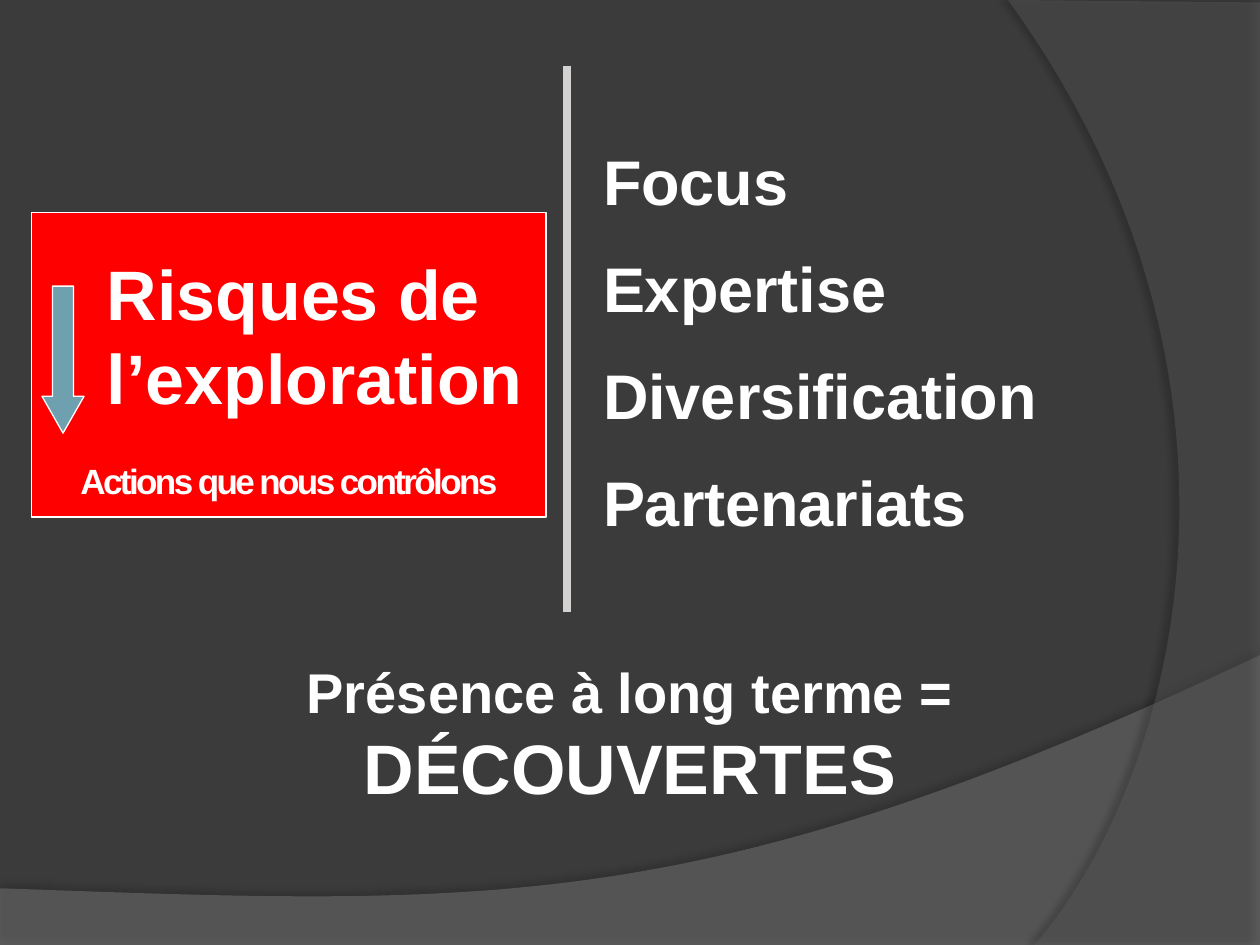
import pptx
import pptx.util
import pptx.dml.color
import pptx.enum.shapes
import pptx.enum.text
from lxml import etree
from pptx.oxml.ns import qn

Pt = pptx.util.Pt
SHAPE = pptx.enum.shapes.MSO_SHAPE
ALIGN = pptx.enum.text.PP_ALIGN
COLORS = {
    "background": "3B3B3B", "hill": "7F7F7F", "arc": "5E5E5E", "shadow": "000000",
    "text": "FFFFFF", "divider": "D4D2D0", "panel": "FF0000", "arrow": "6EA0B0",
}


def rgb(name):
    return pptx.dml.color.RGBColor.from_string(COLORS[name])


def curve(p0, p1, p2, p3, steps=60):
    """Points along a cubic Bezier curve, without its start."""
    points = []
    for i in range(1, steps + 1):
        t = i / steps
        weights = ((1 - t) ** 3, 3 * t * (1 - t) ** 2, 3 * t * t * (1 - t), t ** 3)
        points.append(tuple(sum(w * p[axis] for w, p in zip(weights, (p0, p1, p2, p3)))
                            for axis in (0, 1)))
    return points


def add_wave(slide, points, color, opacity, shadow_opacity, distance, angle):
    """Translucent outline with a soft shadow."""
    start, *rest = [(Pt(x), Pt(y)) for x, y in points]
    builder = slide.shapes.build_freeform(*start)
    builder.add_line_segments(rest, close=True)
    sp = builder.convert_to_shape()
    sp.fill.solid()
    sp.fill.fore_color.rgb = rgb(color)
    sp.line.fill.background()
    srgb = sp.fill._xPr.find(".//" + qn("a:srgbClr"))
    etree.SubElement(srgb, qn("a:alpha"), val=str(opacity * 1000))
    sp.shadow.inherit = False
    effects = sp._element.spPr.find(qn("a:effectLst"))
    shadow = etree.SubElement(effects, qn("a:outerShdw"), blurRad=str(Pt(4)),
                              dist=str(Pt(distance)), dir=str(angle * 60000),
                              algn="ctr", rotWithShape="0")
    tint = etree.SubElement(shadow, qn("a:srgbClr"), val=COLORS["shadow"])
    etree.SubElement(tint, qn("a:alpha"), val=str(shadow_opacity * 1000))


def add_backdrop(slide, width, height):
    slide.background.fill.solid()
    slide.background.fill.fore_color.rgb = rgb("background")
    left, right = (0, 507.6), (width, 374.4)
    hill = [left, (0, height), (width, height), right]
    hill += curve(right, (402.48, 524.88), (281.52, 517.68), left)
    add_wave(slide, hill, "hill", 45, 35, 3.5, 270)
    bottom, top = (591.12, height), (576, 0)
    arc = [(width, 1.44), (width, height), bottom]
    arc += curve(bottom, (673.2, 445.68), (732.96, 216), top)
    add_wave(slide, arc, "arc", 40, 45, 4, 180)


def add_text(slide, box, paragraphs, align=ALIGN.LEFT, spacing=None):
    """Bold text; each paragraph is a list of (text, size) runs."""
    tf = slide.shapes.add_textbox(*map(Pt, box)).text_frame
    tf.word_wrap = True
    tf.auto_size = pptx.enum.text.MSO_AUTO_SIZE.SHAPE_TO_FIT_TEXT
    for i, runs in enumerate(paragraphs):
        p = tf.paragraphs[0] if i == 0 else tf.add_paragraph()
        p.alignment = align
        before = etree.SubElement(p._p.get_or_add_pPr(), qn("a:spcBef"))
        etree.SubElement(before, qn("a:spcPct"), val="50000")
        p.font.name = "Arial"
        p.font.bold = True
        p.font.color.rgb = rgb("text")
        for text, size in runs:
            r = p.add_run()
            r.text = text
            r.font.name = "Arial"
            r.font.bold = True
            r.font.color.rgb = rgb("text")
            r.font.size = Pt(size)
            if spacing is not None:
                r.font._element.set("spc", str(int(spacing * 100)))


def add_block(slide, shape, box, fill):
    sp = slide.shapes.add_shape(shape, *map(Pt, box))
    sp.shadow.inherit = False
    sp.fill.solid()
    sp.fill.fore_color.rgb = rgb(fill)
    sp.line.color.rgb = rgb("text")
    sp.line.width = Pt(0.75)
    return sp


def add_divider(slide, x, top, bottom):
    line = slide.shapes.add_connector(pptx.enum.shapes.MSO_CONNECTOR.STRAIGHT,
                                      Pt(x), Pt(top), Pt(x), Pt(bottom))
    line.line.color.rgb = rgb("divider")
    line.line.width = Pt(5)
    etree.SubElement(line._element.spPr, qn("a:effectLst"))


def add_risk_panel(slide, left, top, width, height):
    add_block(slide, SHAPE.RECTANGLE, (left, top, width, height), "panel")
    add_text(slide, (left + 36, top + 18, 270, 103), [[("Risques de l’exploration", 40)]])
    arrow = add_block(slide, SHAPE.DOWN_ARROW, (left + 6, top + 42, 24, 84), "arrow")
    arrow.adjustments[0] = 0.5
    arrow.adjustments[1] = 0.875
    add_text(slide, (left + 2, top + 137.5, width - 4, 31.5),
             [[("Actions que nous contrôlons", 20)]], ALIGN.CENTER, spacing=-1.5)


def main():
    prs = pptx.Presentation()
    prs.slide_width, prs.slide_height = Pt(720), Pt(540)
    slide = prs.slides.add_slide(prs.slide_layouts[6])
    add_backdrop(slide, 720, 540)
    strengths = ("Focus", "Expertise", "Diversification", "Partenariats")
    add_text(slide, (337.5, 78, 353, 247), [[(word, 36)] for word in strengths])
    add_divider(slide, 324, 37.5, 349.5)
    add_risk_panel(slide, 18, 121.5, 294, 174)
    add_text(slide, (14, 372, 692, 94.5),
             [[("Présence à long terme = ", 32), ("DÉCOUVERTES", 40)]], ALIGN.CENTER)
    prs.save("out.pptx")


if __name__ == "__main__":
    main()
